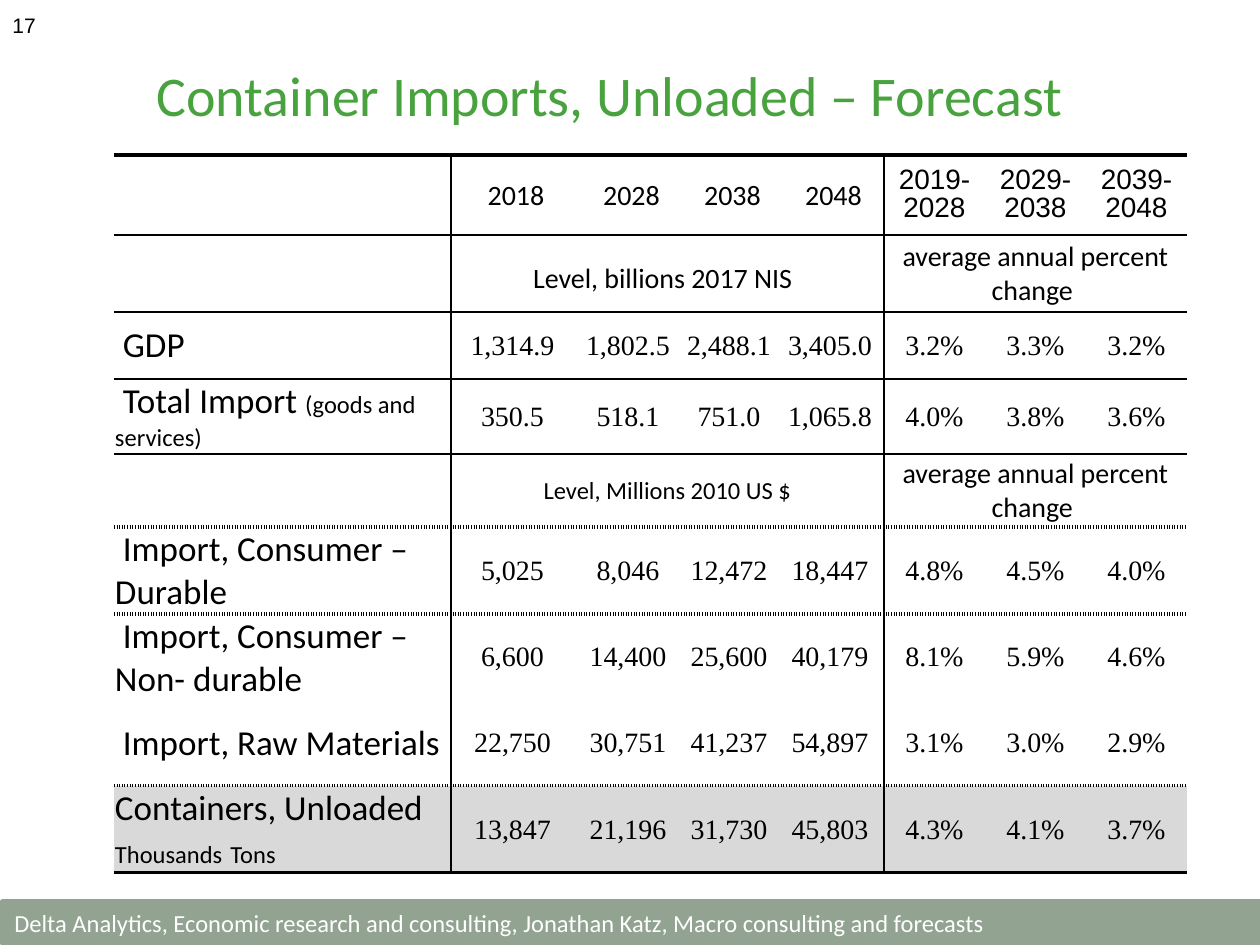
from dataclasses import dataclass

from lxml import etree
from pptx import Presentation
from pptx.dml.color import RGBColor
from pptx.enum.shapes import MSO_SHAPE
from pptx.enum.text import MSO_ANCHOR, PP_ALIGN
from pptx.oxml.ns import qn
from pptx.util import Emu, Pt

RECTANGLE = MSO_SHAPE.RECTANGLE
MIDDLE = MSO_ANCHOR.MIDDLE
LEFT, CENTER = PP_ALIGN.LEFT, PP_ALIGN.CENTER
TITLE_ONLY = 5
PX_PER_INCH = 126


@dataclass(frozen=True)
class Theme:
    black: str = "000000"
    white: str = "FFFFFF"
    green: str = "48A23E"
    sage: str = "92A391"
    gray: str = "D9D9D9"
    font: str = "Calibri"
    number_font: str = "Times New Roman"
    complex_font: str = "Arial"
    title: int = 32
    label: int = 20
    value: int = 16
    note: int = 14
    page: int = 12


THEME = Theme()
THIN, THICK, DOTTED = (1, "solid"), (2.25, "solid"), (2.25, "sysDot")
COLUMN_WIDTHS = [337, 130] + [101] * 6
ROW_HEIGHTS = [80, 77, 67, 75, 73, 87, 86, 86, 87]
ROW_RULES = [THICK, THIN, THIN, THIN, THIN, DOTTED, DOTTED, None, DOTTED, THICK]
COLUMN_RULES = [None, THIN, None, None, None, THIN, None, None, None]
YEARS = ["2018", "2028", "2038", "2048"]
PERIODS = ["2019-2028", "2029-2038", "2039-2048"]
UNIT_ROWS = {
    1: [("Level, billions 2017 NIS", THEME.value), (" ", 24)],
    4: [("Level, Millions 2010 US $", THEME.note)],
}
CHANGE = [("average annual percent change ", THEME.value)]
DATA_ROWS = {
    2: ("1,314.9", "1,802.5", "2,488.1", "3,405.0", "3.2%", "3.3%", "3.2%"),
    3: ("350.5", "518.1", "751.0", "1,065.8", "4.0%", "3.8%", "3.6%"),
    5: ("5,025", "8,046", "12,472", "18,447", "4.8%", "4.5%", "4.0%"),
    6: ("6,600", "14,400", "25,600", "40,179", "8.1%", "5.9%", "4.6%"),
    7: ("22,750", "30,751", "41,237", "54,897", "3.1%", "3.0%", "2.9%"),
    8: ("13,847", "21,196", "31,730", "45,803", "4.3%", "4.1%", "3.7%"),
}
LABELS = {
    2: [[(" GDP", THEME.label)]],
    3: [[(" Total Import ", THEME.label), ("(goods and services)", THEME.note)]],
    5: [[(" Import, Consumer – Durable", THEME.label)]],
    6: [[(" Import, Consumer – Non- durable", THEME.label)]],
    7: [[(" Import, Raw Materials", THEME.label)]],
    8: [
        [("Containers, Unloaded", THEME.label)],
        [("Thousands", THEME.note), (" ", THEME.label), ("Tons", THEME.note)],
    ],
}
TOTAL_ROW = 8


def px(length):
    return Emu(round(length * 914400 / PX_PER_INCH))


def rgb(color):
    return RGBColor.from_string(color)


class SlideBuilder:
    def __init__(self, presentation, theme):
        self.theme = theme
        self.slide = presentation.slides.add_slide(presentation.slide_layouts[TITLE_ONLY])

    def set_text(self, paragraph, runs, align=LEFT, font=None, color=None, rtl=False):
        for text, size in runs:
            run = paragraph.add_run()
            run.text = text
            if len(runs) > 1:
                run.font.size = Pt(size)
        paragraph.alignment = align
        paragraph.font.size = Pt(runs[0][1])
        paragraph.font.name = font or self.theme.font
        paragraph.font.color.rgb = rgb(color or self.theme.black)
        if rtl:
            properties = paragraph._p.get_or_add_pPr()
            properties.set("rtl", "1")
            defaults = properties.find(qn("a:defRPr"))
            etree.SubElement(defaults, qn("a:cs"), typeface=self.theme.complex_font)

    def title(self, text, left, top, width, height):
        shape = self.slide.shapes.title
        shape.left, shape.top, shape.width, shape.height = map(px, (left, top, width, height))
        shape.text_frame.vertical_anchor = MIDDLE
        self.set_text(shape.text_frame.paragraphs[0], [(text, self.theme.title)], color=self.theme.green)

    def footer(self, text, left, top, width, height):
        shape = self.slide.shapes.add_shape(RECTANGLE, *map(px, (left, top, width, height)))
        shape.shadow.inherit = False
        shape.fill.solid()
        shape.fill.fore_color.rgb = rgb(self.theme.sage)
        shape.line.color.rgb = rgb(self.theme.sage)
        shape.line.width = Pt(2)
        shape.text_frame.vertical_anchor = MIDDLE
        self.set_text(shape.text_frame.paragraphs[0], [(text, self.theme.note)], color=self.theme.white)

    def page_number(self, text, left, top, width, height):
        frame = self.slide.shapes.add_textbox(*map(px, (left, top, width, height))).text_frame
        frame.word_wrap = True
        frame.vertical_anchor = MIDDLE
        self.set_text(frame.paragraphs[0], [(text, self.theme.page)], rtl=True)

    def border(self, cell, side, rule):
        properties = cell._tc.get_or_add_tcPr()
        weight, dash = rule or THIN
        line = etree.SubElement(properties, qn(f"a:ln{side}"), w=str(int(Pt(weight))))
        if rule is None:
            etree.SubElement(line, qn("a:noFill"))
            return
        fill = etree.SubElement(line, qn("a:solidFill"))
        etree.SubElement(fill, qn("a:srgbClr"), val=self.theme.black)
        etree.SubElement(line, qn("a:prstDash"), val=dash)

    def cell(self, cell, row, column):
        cell.margin_left = cell.margin_right = cell.margin_top = px(1)
        cell.margin_bottom = 0
        cell.vertical_anchor = MIDDLE
        self.border(cell, "L", COLUMN_RULES[column])
        self.border(cell, "R", COLUMN_RULES[column + 1])
        self.border(cell, "T", ROW_RULES[row])
        self.border(cell, "B", ROW_RULES[row + 1])
        cell.fill.solid()
        cell.fill.fore_color.rgb = rgb(self.theme.gray if row == TOTAL_ROW else self.theme.white)

    def forecast_table(self, left, top):
        rows, columns = len(ROW_HEIGHTS), len(COLUMN_WIDTHS)
        size = sum(COLUMN_WIDTHS), sum(ROW_HEIGHTS)
        table = self.slide.shapes.add_table(rows, columns, *map(px, (left, top, *size))).table
        table.first_row = table.horz_banding = False
        for column, width in zip(table.columns, COLUMN_WIDTHS):
            column.width = px(width)
        for row, height in zip(table.rows, ROW_HEIGHTS):
            row.height = px(height)
        for row in UNIT_ROWS:
            table.cell(row, 1).merge(table.cell(row, 4))
            table.cell(row, 5).merge(table.cell(row, 7))
        for row in range(rows):
            for column in range(columns):
                self.cell(table.cell(row, column), row, column)
        self.fill_table(table)

    def fill_table(self, table):
        size = self.theme.value
        for column, heading in enumerate(YEARS + PERIODS, 1):
            paragraph = table.cell(0, column).text_frame.paragraphs[0]
            is_period = heading in PERIODS
            self.set_text(paragraph, [(heading, size)], CENTER, rtl=is_period)
            if is_period:
                paragraph.line_spacing = 0.88
        for row, unit in UNIT_ROWS.items():
            for column, runs in ((1, unit), (5, CHANGE)):
                self.set_text(table.cell(row, column).text_frame.paragraphs[0], runs, CENTER)
        for row, values in DATA_ROWS.items():
            frame = table.cell(row, 0).text_frame
            for index, runs in enumerate(LABELS[row]):
                self.set_text(frame.add_paragraph() if index else frame.paragraphs[0], runs)
            for column, value in enumerate(values, 1):
                text = value if value.endswith("%") else value + " "
                paragraph = table.cell(row, column).text_frame.paragraphs[0]
                self.set_text(paragraph, [(text, size)], CENTER, self.theme.number_font)


def main():
    presentation = Presentation()
    presentation.slide_width, presentation.slide_height = px(1260), px(945)
    builder = SlideBuilder(presentation, THEME)
    builder.footer(
        "Delta Analytics, Economic research and consulting, Jonathan Katz, "
        "Macro consulting and forecasts", 2, 901, 1261, 43)
    builder.title("Container Imports, Unloaded – Forecast", 144, 19, 1042, 151)
    builder.page_number("17", 0, 0, 294, 50)
    builder.forecast_table(114, 155)
    presentation.save("out.pptx")


if __name__ == "__main__":
    main()
